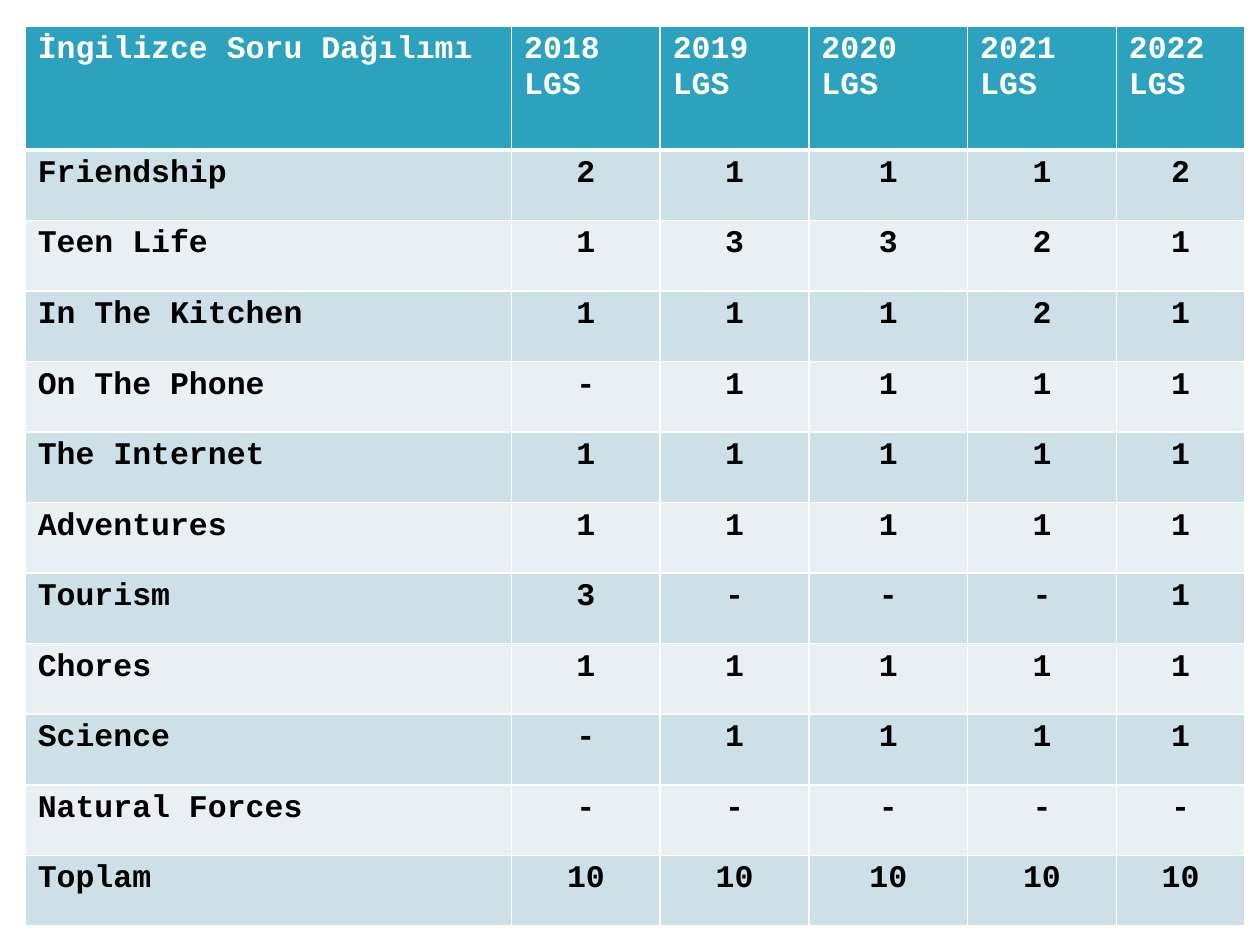
"""Build a slide with a table of exam question counts by unit and year."""
import pptx
import pptx.dml.color
import pptx.enum.text
import pptx.oxml
import pptx.oxml.ns
import pptx.util
from pptx.util import Inches

ALIGN = pptx.enum.text.PP_ALIGN
HEAD = ["İngilizce Soru Dağılımı"] + [f"{year} LGS" for year in range(2018, 2023)]
UNITS = [
    ("Friendship", "2 1 1 1 2"),
    ("Teen Life", "1 3 3 2 1"),
    ("In The Kitchen", "1 1 1 2 1"),
    ("On The Phone", "- 1 1 1 1"),
    ("The Internet", "1 1 1 1 1"),
    ("Adventures", "1 1 1 1 1"),
    ("Tourism", "3 - - - 1"),
    ("Chores", "1 1 1 1 1"),
    ("Science", "- 1 1 1 1"),
    ("Natural Forces", "- - - - -"),
    ("Toplam", "10 10 10 10 10"),
]
WIDTHS = [3.86, 1.18, 1.18, 1.26, 1.18, 1.02]


def color(code):
    return pptx.dml.color.RGBColor.from_string(code)


class Deck:
    """Hold the table style and the current slide."""
    face, size = "Courier New", 18
    white, black, teal = "FFFFFF", "000000", "2DA2BF"
    bands = ["CDE0E8", "E8F0F4"]

    def __init__(self):
        self.file = pptx.Presentation()
        self.file.slide_width = Inches(10)
        self.file.slide_height = Inches(7.5)
        self.slide = self.file.slides.add_slide(self.file.slide_layouts[6])

    def edge(self, cell, side, width):
        space = pptx.oxml.ns.nsdecls("a")
        line = pptx.oxml.parse_xml(
            f'<a:{side} {space} w="{pptx.util.Pt(width)}"><a:solidFill>'
            f'<a:srgbClr val="{self.white}"/></a:solidFill></a:{side}>')
        props = cell._tc.get_or_add_tcPr()
        props.insert(len(props) - 1, line)

    def cell(self, cell, text, fill, ink, align, top=1, base=1):
        cell.fill.solid()
        cell.fill.fore_color.rgb = color(fill)
        for side, width in (("lnL", 1), ("lnR", 1), ("lnT", top), ("lnB", base)):
            self.edge(cell, side, width)
        cell.text = text
        para = cell.text_frame.paragraphs[0]
        para.alignment = align
        para.font.name = self.face
        para.font.size = pptx.util.Pt(self.size)
        para.font.bold = True
        para.font.color.rgb = color(ink)

    def table(self, left, top, widths, tall, step, head, rows):
        high = tall + step * len(rows)
        grid = self.slide.shapes.add_table(
            len(rows) + 1, len(head), Inches(left), Inches(top),
            Inches(sum(widths)), Inches(high)).table
        for col, width in zip(grid.columns, widths):
            col.width = Inches(width)
        for num, row in enumerate(grid.rows):
            row.height = Inches(step if num else tall)
        for col, text in enumerate(head):
            align = ALIGN.LEFT if col else ALIGN.JUSTIFY
            self.cell(grid.cell(0, col), text, self.teal, self.white, align, base=3)
        for num, (name, counts) in enumerate(rows):
            for col, text in enumerate([name] + counts.split()):
                align = ALIGN.CENTER if col else ALIGN.LEFT
                self.cell(grid.cell(num + 1, col), text, self.bands[num % 2],
                          self.black, align, top=1 if num else 3)


def main():
    deck = Deck()
    deck.table(0.2, 0.21, WIDTHS, 0.98, 0.56, HEAD, UNITS)
    deck.file.save("out.pptx")


if __name__ == "__main__":
    main()
